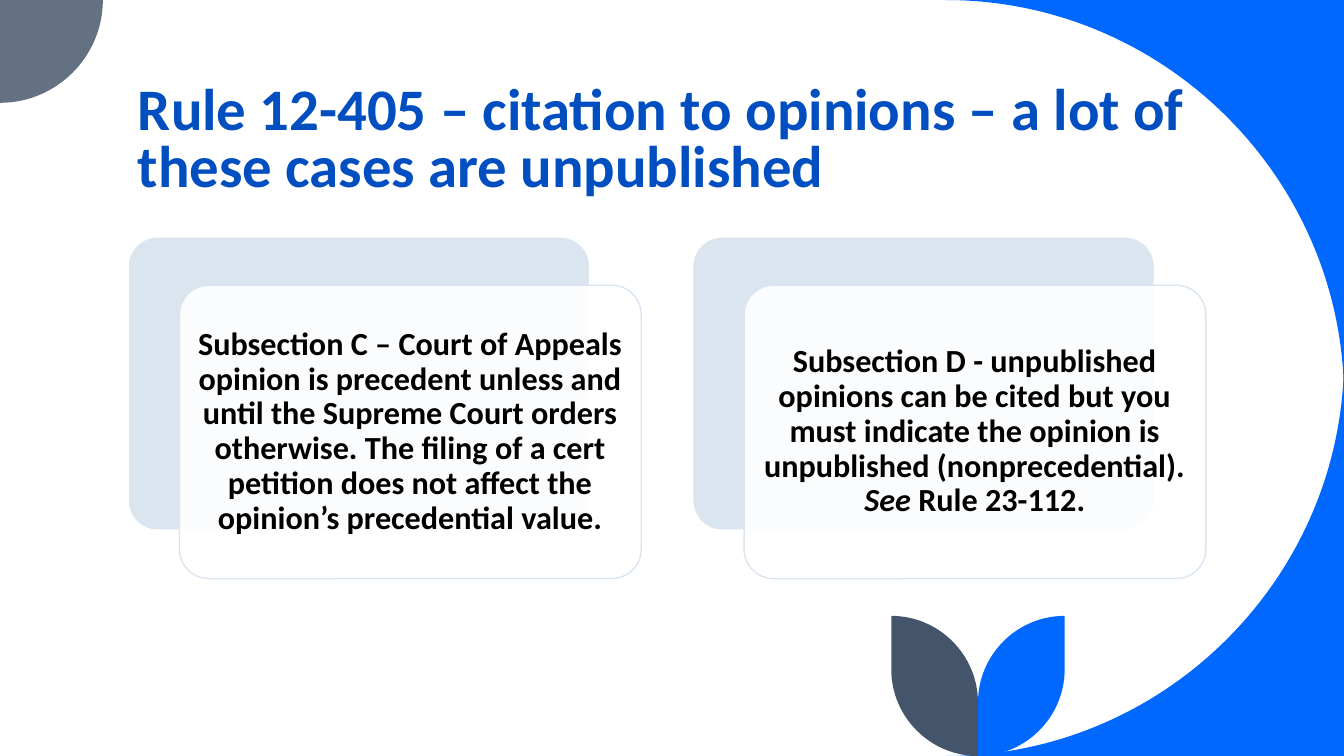
from lxml import etree
from pptx import Presentation
from pptx.dml.color import RGBColor
from pptx.enum.shapes import MSO_SHAPE
from pptx.enum.text import MSO_ANCHOR, PP_ALIGN
from pptx.oxml.ns import qn
from pptx.util import Pt

PX = 9144  # 100 px to the inch
SLIDE_W, SLIDE_H = 1333, 750
ROUNDNESS = 0.55  # pull of a curve towards its corner, for a quarter circle

WHITE = RGBColor(0xFF, 0xFF, 0xFF)
BLACK = RGBColor(0x00, 0x00, 0x00)
BLUE = RGBColor(0x00, 0x68, 0xFF)
TITLE_BLUE = RGBColor(0x00, 0x4E, 0xBF)
SLATE = RGBColor(0x44, 0x54, 0x6A)
GREY = RGBColor(0x63, 0x71, 0x83)
PALE = RGBColor(0xDA, 0xE5, 0xEF)

ROUNDED = MSO_SHAPE.ROUNDED_RECTANGLE
MIDDLE, BOTTOM = MSO_ANCHOR.MIDDLE, MSO_ANCHOR.BOTTOM
LEFT, CENTER = PP_ALIGN.LEFT, PP_ALIGN.CENTER

TITLE = "Rule 12-405 – citation to opinions – a lot of these cases are unpublished"
# Each card is a list of (text, italic) pieces.
CARDS = [
    [("Subsection C – Court of Appeals opinion is precedent unless and until "
      "the Supreme Court orders otherwise. The filing of a cert petition does "
      "not affect the opinion’s precedential value.", False)],
    [("Subsection D - unpublished opinions can be cited but you must indicate "
      "the opinion is unpublished (nonprecedential). ", False),
     ("See", True), (" Rule 23-112.", False)],
]


def px(*lengths):
    return [round(length * PX) for length in lengths]


def bend(start, corner, end):
    """The two controls and the end of a quarter circle rounding a corner."""
    controls = [tuple(p + (c - p) * ROUNDNESS for p, c in zip(point, corner))
                for point in (start, end)]
    return controls + [end]


def add_outline(slide, start, segments, color):
    """Segments are lists of one point for a line, three for a curve."""
    builder = slide.shapes.build_freeform(*px(*start))
    points = [tuple(px(*point)) for segment in segments for point in segment]
    builder.add_line_segments(points, close=True)
    outline = builder.convert_to_shape()
    outline.shadow.inherit = False
    outline.fill.solid()
    outline.fill.fore_color.rgb = color
    outline.line.fill.background()

    steps = iter(list(outline._element.iter(qn("a:lnTo"))))
    for segment in segments:
        nodes = [next(steps) for _ in segment]
        if len(nodes) == 3:
            curve = etree.Element(qn("a:cubicBezTo"))
            nodes[0].addprevious(curve)
            for node in nodes:
                curve.append(node[0])
                node.getparent().remove(node)


def add_corners(slide, radius, small_radius):
    inner_x = SLIDE_W - radius
    for edge, reach in ((0, radius), (SLIDE_H, SLIDE_H - radius)):
        corner, near, far = (SLIDE_W, edge), (inner_x, edge), (SLIDE_W, reach)
        add_outline(slide, corner, [[near], bend(near, corner, far)], BLUE)
    right, below = (small_radius, 0), (0, small_radius)
    rounding = bend(right, (small_radius, small_radius), below)
    add_outline(slide, (0, 0), [[right], rounding], GREY)


def add_sprout(slide, stem_x, top, width, height):
    """Two mirrored leaves that meet at the stem."""
    bottom = top + height
    for side, color in ((1, BLUE), (-1, SLATE)):
        outer_x = stem_x + side * width
        tip, shoulder = (outer_x, top), (outer_x, bottom - width)
        foot, fork = (stem_x, bottom), (stem_x, top + width)
        segments = [[shoulder], bend(shoulder, (outer_x, bottom), foot),
                    [fork], bend(fork, (stem_x, top), tip)]
        add_outline(slide, tip, segments, color)


def add_text(slide, box, pieces, size, color, align, anchor, spacing):
    textbox = slide.shapes.add_textbox(*px(*box))
    frame = textbox.text_frame
    frame.word_wrap = True
    frame.vertical_anchor = anchor
    paragraph = frame.paragraphs[0]
    paragraph.alignment = align
    paragraph.line_spacing = spacing
    for text, italic in pieces:
        run = paragraph.add_run()
        run.text = text
        font_format = {"name": "Calibri", "size": Pt(size), "bold": True, "italic": italic}
        for name, value in font_format.items():
            setattr(run.font, name, value)
        run.font.color.rgb = color
    return frame


def add_title(slide, *box):
    add_text(slide, box, [(TITLE, False)], 42, TITLE_BLUE, LEFT, BOTTOM, 0.8)


def add_panel(slide, left, top, width, height, fill, line):
    panel = slide.shapes.add_shape(ROUNDED, *px(left, top, width, height))
    panel.adjustments[0] = 0.1
    panel.shadow.inherit = False
    panel.fill.solid()
    panel.fill.fore_color.rgb = fill
    panel.line.color.rgb = line
    panel.line.width = Pt(1)
    return panel


def add_card(slide, left, top, width, height, pieces):
    """A translucent panel with text, set off from the pale panel behind it."""
    add_panel(slide, left, top, width, height, PALE, WHITE)
    front_left, front_top = left + 51, top + 48
    front = add_panel(slide, front_left, front_top, width, height, WHITE, PALE)
    fill_color = front._element.spPr.find(qn("a:solidFill"))[0]
    etree.SubElement(fill_color, qn("a:alpha"), val="90000")
    inset = 8.5
    box = (front_left + inset, front_top + inset, width - 2 * inset, height - 2 * inset)
    frame = add_text(slide, box, pieces, 23, BLACK, CENTER, MIDDLE, 0.9)
    for side in ("left", "top", "right", "bottom"):
        setattr(frame, f"margin_{side}", 10 * PX)


def add_cards(slide, left, top, pitch):
    for i, pieces in enumerate(CARDS):
        add_card(slide, left + i * pitch, top, 458, 291, pieces)


def main():
    deck = Presentation()
    deck.slide_width, deck.slide_height = px(SLIDE_W, SLIDE_H)
    slide = deck.slides.add_slide(deck.slide_layouts[6])
    add_corners(slide, 395, 102)
    add_sprout(slide, 970, 611, 86, 139)
    add_title(slide, 127, 11, 1069, 191)
    add_cards(slide, 127, 235, 560)
    deck.save("out.pptx")


if __name__ == "__main__":
    main()
